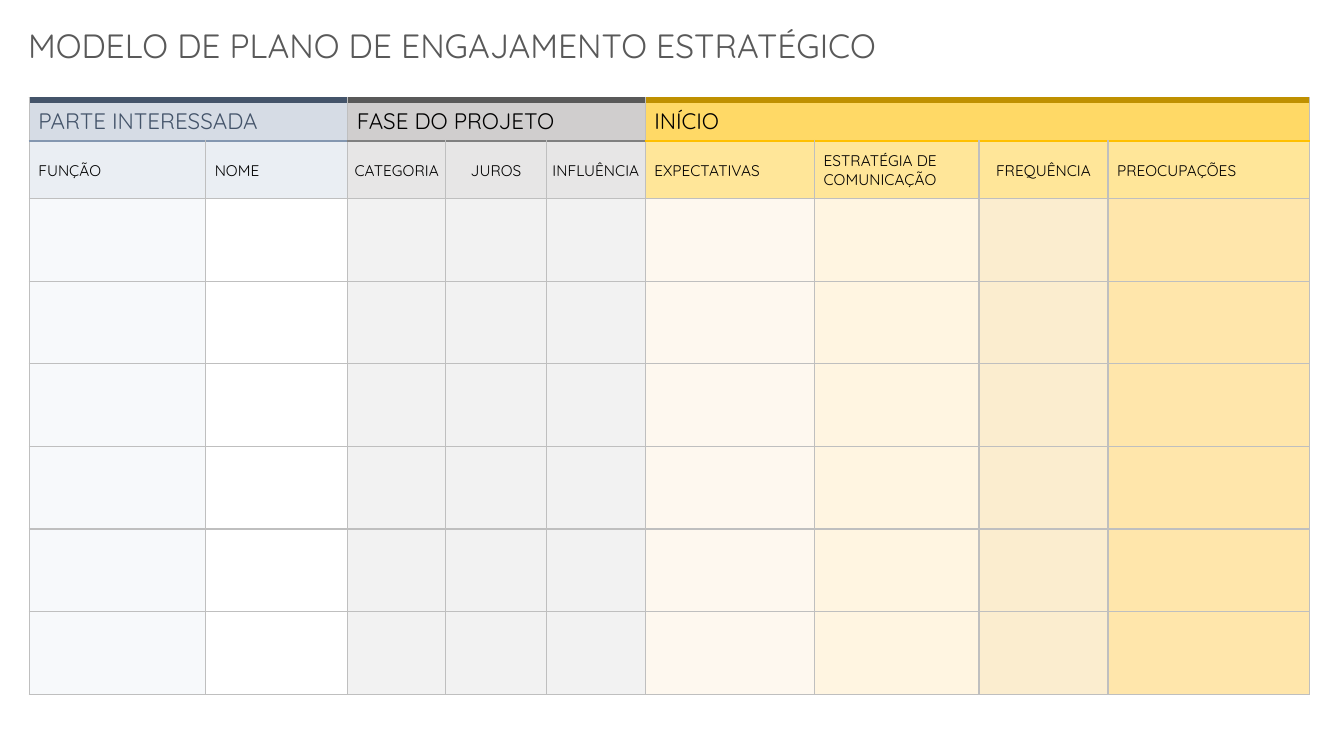
import pptx
import pptx.util
import pptx.dml.color
import pptx.enum.text
import pptx.oxml
import pptx.oxml.ns
import lxml.etree

Inches = pptx.util.Inches
CENTER = pptx.enum.text.PP_ALIGN.CENTER
LEFT = pptx.enum.text.PP_ALIGN.LEFT
MIDDLE = pptx.enum.text.MSO_ANCHOR.MIDDLE

COLORS = {
    "title": "595959", "text": "000000", "grid": "BFBFBF",
    "navy": "44546A", "slate": "8497B0", "mist": "D6DCE5", "pale_blue": "EAEEF3",
    "charcoal": "595959", "gray": "808080", "silver": "D0CECE", "pale_gray": "E7E6E6",
    "bronze": "BF9000", "gold": "FFC000", "yellow": "FFD966", "pale_yellow": "FFE699",
    "ice": "F7F9FB", "white": "FFFFFF", "smoke": "F2F2F2", "cream": "FEF8EF",
    "ivory": "FFF5E1", "sand": "FBEDCF", "honey": "FFE6AB",
}

# Each group: heading, text color, top edge, heading fill, divider, label fill,
# then its columns as (label, width, body fill, alignment)
GROUPS = [
    ("PARTE INTERESSADA", "navy", "navy", "mist", "slate", "pale_blue", [
        ("FUNÇÃO", 1.75, "ice", LEFT),
        ("NOME", 1.41, "white", LEFT)]),
    ("FASE DO PROJETO", "text", "charcoal", "silver", "gray", "pale_gray", [
        ("CATEGORIA", 0.97, "smoke", CENTER),
        ("JUROS", 1, "smoke", CENTER),
        ("INFLUÊNCIA", 0.98, "smoke", CENTER)]),
    ("INÍCIO", "text", "bronze", "yellow", "gold", "pale_yellow", [
        ("EXPECTATIVAS", 1.68, "cream", LEFT),
        ("ESTRATÉGIA DE COMUNICAÇÃO", 1.63, "ivory", LEFT),
        ("FREQUÊNCIA", 1.28, "sand", CENTER),
        ("PREOCUPAÇÕES", 2, "honey", LEFT)]),
]
ROW_HEIGHTS = [0.41, 0.57] + [0.82] * 6


class SlideBuilder:
    font_name = "Quicksand"

    def __init__(self, slide):
        self.slide = slide

    def color(self, name):
        return pptx.dml.color.RGBColor.from_string(COLORS[name])

    def styled_text(self, text_frame, text, size, color, alignment=LEFT):
        text_frame.text = text
        paragraph = text_frame.paragraphs[0]
        paragraph.alignment = alignment
        font = paragraph.runs[0].font
        font.name = self.font_name
        font.size = pptx.util.Pt(size)
        font.color.rgb = self.color(color)

    def text_box(self, left, top, width, height, text, size, color):
        box = self.slide.shapes.add_textbox(
            Inches(left), Inches(top), Inches(width), Inches(height))
        box.text_frame.word_wrap = True
        self.styled_text(box.text_frame, text, size, color)

    def table(self, left, top, widths, heights):
        frame = self.slide.shapes.add_table(
            len(heights), len(widths), Inches(left), Inches(top),
            Inches(sum(widths)), Inches(sum(heights)))
        table = frame.table
        table.first_row = False
        table.horz_banding = False
        for column, width in zip(table.columns, widths):
            column.width = Inches(width)
        for row, height in zip(table.rows, heights):
            row.height = Inches(height)
        return table

    def cell_style(self, cell, fill, top=("grid", 1), bottom=("grid", 1)):
        properties = cell._tc.get_or_add_tcPr()
        edges = {"lnL": ("grid", 1), "lnR": ("grid", 1), "lnT": top, "lnB": bottom}
        for tag, (color, width) in edges.items():
            line = lxml.etree.SubElement(
                properties, pptx.oxml.ns.qn("a:" + tag), w=str(pptx.util.Pt(width)))
            solid = lxml.etree.SubElement(line, pptx.oxml.ns.qn("a:solidFill"))
            lxml.etree.SubElement(solid, pptx.oxml.ns.qn("a:srgbClr"), val=COLORS[color])
        cell.fill.solid()
        cell.fill.fore_color.rgb = self.color(fill)

    def cell_text(self, cell, text, size, color, alignment=LEFT):
        cell.vertical_anchor = MIDDLE
        cell.margin_left = Inches(0.01 if alignment == CENTER else 0.09)
        cell.margin_top = cell.margin_right = Inches(0.01)
        cell.margin_bottom = 0
        self.styled_text(cell.text_frame, text, size, color, alignment)


def main():
    presentation = pptx.Presentation()
    presentation.slide_width = Inches(13.33)
    presentation.slide_height = Inches(7.5)
    builder = SlideBuilder(presentation.slides.add_slide(presentation.slide_layouts[6]))

    # Title
    builder.text_box(0.18, 0.2, 9.13, 0.5,
                     "MODELO DE PLANO DE ENGAJAMENTO ESTRATÉGICO", 24, "title")

    # Engagement table
    widths = [column[1] for group in GROUPS for column in group[-1]]
    table = builder.table(0.29, 0.99, widths, ROW_HEIGHTS)
    first = 0
    for heading, text_color, edge, heading_fill, divider, label_fill, columns in GROUPS:
        # Column labels and empty body cells
        for index, (label, _, body_fill, alignment) in enumerate(columns, first):
            builder.cell_style(table.cell(0, index), heading_fill,
                               top=(edge, 4.5), bottom=(divider, 2.25))
            label_cell = table.cell(1, index)
            builder.cell_style(label_cell, label_fill, top=(divider, 2.25))
            builder.cell_text(label_cell, label, 11, "text", alignment)
            for row in range(2, len(ROW_HEIGHTS)):
                builder.cell_style(table.cell(row, index), body_fill)

        # Group heading
        last = first + len(columns) - 1
        heading_cell = table.cell(0, first)
        heading_cell.merge(table.cell(0, last))
        builder.cell_text(heading_cell, heading, 16, text_color)
        first = last + 1

    presentation.save("out.pptx")


if __name__ == "__main__":
    main()
